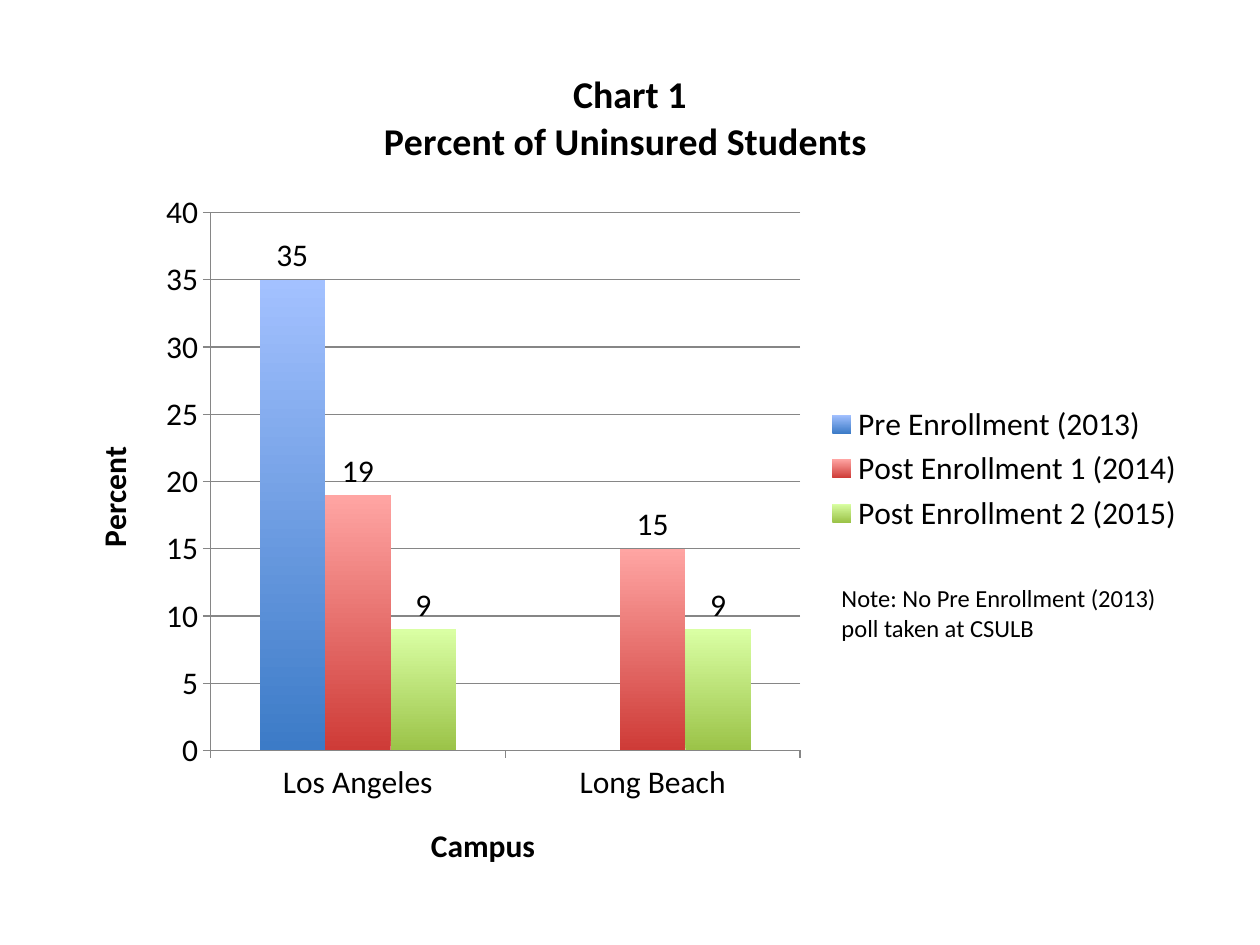
from lxml import etree
from pptx import Presentation
from pptx.chart.data import CategoryChartData
from pptx.dml.color import RGBColor
from pptx.enum.chart import XL_CHART_TYPE as ChartType, XL_LABEL_POSITION as LabelPosition
from pptx.enum.chart import XL_LEGEND_POSITION as LegendPosition, XL_TICK_MARK as TickMark
from pptx.enum.text import MSO_AUTO_SIZE as AutoSize
from pptx.oxml.ns import qn
from pptx.util import Inches, Pt

COLORS = {"text": "000000", "line": "868686"}
CAMPUSES = ["Los Angeles", "Long Beach"]
# Name, values, bottom and top colours of the bars
POLLS = [
    ("Pre Enrollment (2013)", (35, None), "3C7BC7", "A3C1FF"),
    ("Post Enrollment 1 (2014)", (19, 15), "CE3B37", "FFA5A3"),
    ("Post Enrollment 2 (2015)", (9, 9), "9BC348", "DAFFA4"),
]
PLOT_LAYOUT = {"x": 0.13, "y": 0.2, "w": 0.52, "h": 0.63}


class SlideBuilder:
    font_name = "Calibri"

    def __init__(self, slide):
        self.slide = slide

    def style(self, font, size, bold=False):
        font.name = self.font_name
        font.size = Pt(size)
        font.bold = bold
        font.color.rgb = RGBColor.from_string(COLORS["text"])

    def title(self, owner, lines, size):
        owner.has_title = True
        frame = owner.chart_title.text_frame if hasattr(owner, "chart_title") else owner.axis_title.text_frame
        frame.text = "\n".join(lines)
        for paragraph in frame.paragraphs:
            self.style(paragraph.font, size, bold=True)

    def axis(self, axis, title):
        self.title(axis, [title], 18)
        axis.major_tick_mark = TickMark.OUTSIDE
        axis.minor_tick_mark = TickMark.NONE
        self.line(axis.format.line)

    def line(self, line):
        line.color.rgb = RGBColor.from_string(COLORS["line"])
        line.width = Pt(0.75)

    def series(self, series, bottom, top):
        series.invert_if_negative = False
        fill = series.format.fill
        fill.gradient()
        fill.gradient_angle = 90
        for stop, color in zip(fill.gradient_stops, (bottom, top)):
            stop.color.rgb = RGBColor.from_string(color)

    def place_plot(self, chart):
        area = chart._chartSpace.find(".//" + qn("c:plotArea"))
        for old in area.findall(qn("c:layout")):
            area.remove(old)
        layout = etree.Element(qn("c:layout"))
        manual = etree.SubElement(layout, qn("c:manualLayout"))
        settings = {"layoutTarget": "inner", "xMode": "edge", "yMode": "edge", **PLOT_LAYOUT}
        for name, value in settings.items():
            etree.SubElement(manual, qn("c:" + name)).set("val", str(value))
        area.insert(0, layout)

    def column_chart(self, left, top, width, height):
        data = CategoryChartData()
        data.categories = CAMPUSES
        for name, values, *_ in POLLS:
            data.add_series(name, values)
        chart = self.slide.shapes.add_chart(
            ChartType.COLUMN_CLUSTERED, Inches(left), Inches(top), Inches(width), Inches(height), data
        ).chart
        self.style(chart.font, 18)
        self.title(chart, ["Chart 1", "Percent of Uninsured Students "], 21.6)

        # Axes and gridlines
        self.axis(chart.category_axis, "Campus")
        self.axis(chart.value_axis, "Percent")
        chart.value_axis.minimum_scale = 0
        chart.value_axis.maximum_scale = 40
        chart.value_axis.major_unit = 5
        chart.value_axis.has_major_gridlines = True
        self.line(chart.value_axis.major_gridlines.format.line)

        # Bars and their labels
        plot = chart.plots[0]
        plot.gap_width = 150
        plot.overlap = 0
        plot.vary_by_categories = False
        plot.has_data_labels = True
        plot.data_labels.show_value = True
        plot.data_labels.position = LabelPosition.OUTSIDE_END
        self.style(plot.data_labels.font, 18)
        for series, (_, _, bottom, top_color) in zip(plot.series, POLLS):
            self.series(series, bottom, top_color)

        # Legend and plot position
        chart.has_legend = True
        chart.legend.position = LegendPosition.RIGHT
        chart.legend.include_in_layout = False
        self.style(chart.legend.font, 18)
        self.place_plot(chart)

    def text(self, text, left, top, width, height, size):
        box = self.slide.shapes.add_textbox(Inches(left), Inches(top), Inches(width), Inches(height))
        frame = box.text_frame
        frame.word_wrap = True
        frame.auto_size = AutoSize.SHAPE_TO_FIT_TEXT
        frame.text = text
        self.style(frame.paragraphs[0].font, size)


def main():
    presentation = Presentation()
    presentation.slide_width = Inches(10)
    presentation.slide_height = Inches(7.5)
    builder = SlideBuilder(presentation.slides.add_slide(presentation.slide_layouts[6]))
    builder.column_chart(0.5, 0.33, 9, 6.78)
    builder.text("Note: No Pre Enrollment (2013) poll taken at CSULB", 6.58, 4.58, 2.92, 0.57, 14)
    presentation.save("out.pptx")


if __name__ == "__main__":
    main()
